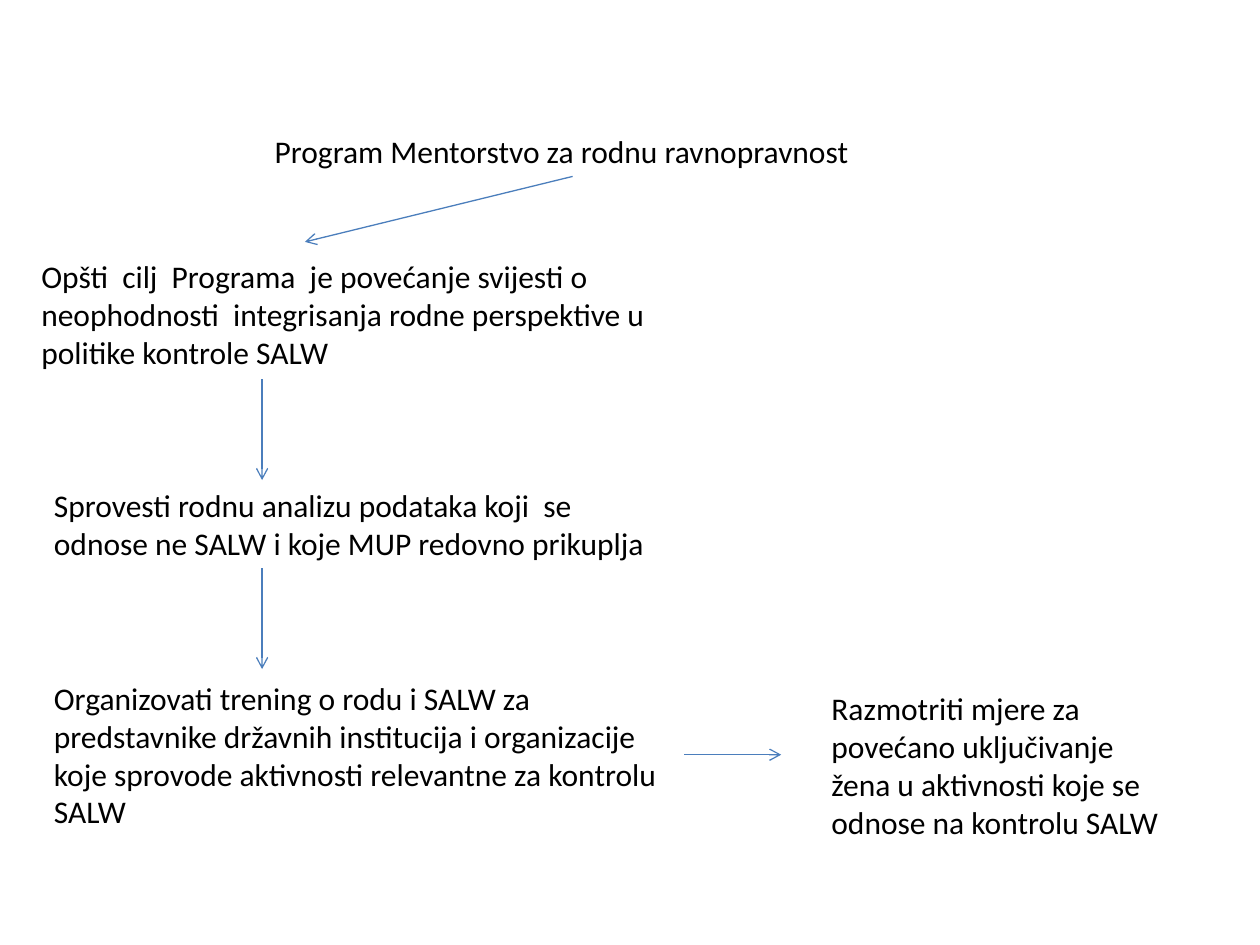
import pptx
import pptx.dml.color
import pptx.enum.shapes
import pptx.enum.text
import pptx.util
from lxml import etree
from pptx.oxml.ns import qn

COLORS = {"text": "000000", "arrow": "4B7EBC", "background": "FFFFFF"}
FONT = "Calibri"
WIDTH, HEIGHT = 10, 7.5
COLUMNS, ROWS = 100, 75

HEADING = "Program Mentorstvo za rodnu ravnopravnost"
STEPS = [
    (0, 0, 10.1, "Opšti  cilj  Programa  je povećanje svijesti o neophodnosti  "
                 "integrisanja rodne perspektive u politike kontrole SALW"),
    (1, 18.2, 7.1, "Sprovesti rodnu analizu podataka koji  se odnose ne SALW "
                   "i koje MUP redovno prikuplja"),
    (1, 33.5, 13.1, "Organizovati trening o rodu i SALW za predstavnike državnih "
                    "institucija i organizacije koje sprovode aktivnosti "
                    "relevantne za kontrolu SALW"),
]
OUTCOME = ("Razmotriti mjere za povećano uključivanje žena u aktivnosti "
           "koje se odnose na kontrolu SALW")


def across(columns):
    return pptx.util.Inches(columns * WIDTH / COLUMNS)


def down(rows):
    return pptx.util.Inches(rows * HEIGHT / ROWS)


def color(name):
    return pptx.dml.color.RGBColor.from_string(COLORS[name])


def write(shape, text, wrap=True):
    frame = shape.text_frame
    frame.text = text
    frame.word_wrap = wrap
    frame.auto_size = pptx.enum.text.MSO_AUTO_SIZE.SHAPE_TO_FIT_TEXT
    frame.vertical_anchor = pptx.enum.text.MSO_ANCHOR.TOP
    para = frame.paragraphs[0]
    para.alignment = pptx.enum.text.PP_ALIGN.LEFT
    for span in para.runs:
        span.font.name = FONT
        span.font.size = pptx.util.Pt(18)
        span.font.color.rgb = color("text")


def add_text(page, box, text):
    left, top, width, height = box
    shape = page.shapes.add_textbox(
        across(left), down(top), across(width), down(height))
    write(shape, text)


def add_arrow(page, start, end):
    arrow = page.shapes.add_connector(
        pptx.enum.shapes.MSO_CONNECTOR.STRAIGHT,
        across(start[0]), down(start[1]), across(end[0]), down(end[1]))
    arrow.line.color.rgb = color("arrow")
    arrow.line.width = pptx.util.Pt(0.75)
    etree.SubElement(arrow.line._get_or_add_ln(), qn("a:tailEnd"), type="arrow")
    etree.SubElement(arrow._element.spPr, qn("a:effectLst"))
    return arrow


def build_heading(page, box):
    left, top, width, height = box
    title = page.shapes.title
    title.left, title.top = across(left), down(top)
    title.width, title.height = across(width), down(height)
    write(title, HEADING, wrap=False)
    bottom = top + height
    arrow = add_arrow(page, (left + width / 2, bottom), (left + 3.4, bottom + 5.2))
    arrow.begin_connect(title, 2)


def build_steps(page, box):
    left, top, width, height = box
    for indent, offset, rows, text in STEPS:
        add_text(page, (left + indent, top + offset, width, rows), text)
    for offset in (10.2, 25.2):
        middle = left + 18.5
        add_arrow(page, (middle, top + offset), (middle, top + offset + 8))


def build_outcome(page, box):
    left, top, width, height = box
    add_text(page, box, OUTCOME)
    level = top + 5.7
    add_arrow(page, (left - 10.7, level), (left - 3, level))


def main():
    deck = pptx.Presentation()
    deck.slide_width = pptx.util.Inches(WIDTH)
    deck.slide_height = pptx.util.Inches(HEIGHT)
    page = deck.slides.add_slide(deck.slide_layouts.get_by_name("Title Only"))
    page.background.fill.solid()
    page.background.fill.fore_color.rgb = color("background")
    build_heading(page, (20.8, 10, 49.3, 4))
    build_steps(page, (2.3, 19.9, 50, 46.6))
    build_outcome(page, (65, 54.2, 28.9, 13.1))
    deck.save("out.pptx")


if __name__ == "__main__":
    main()
